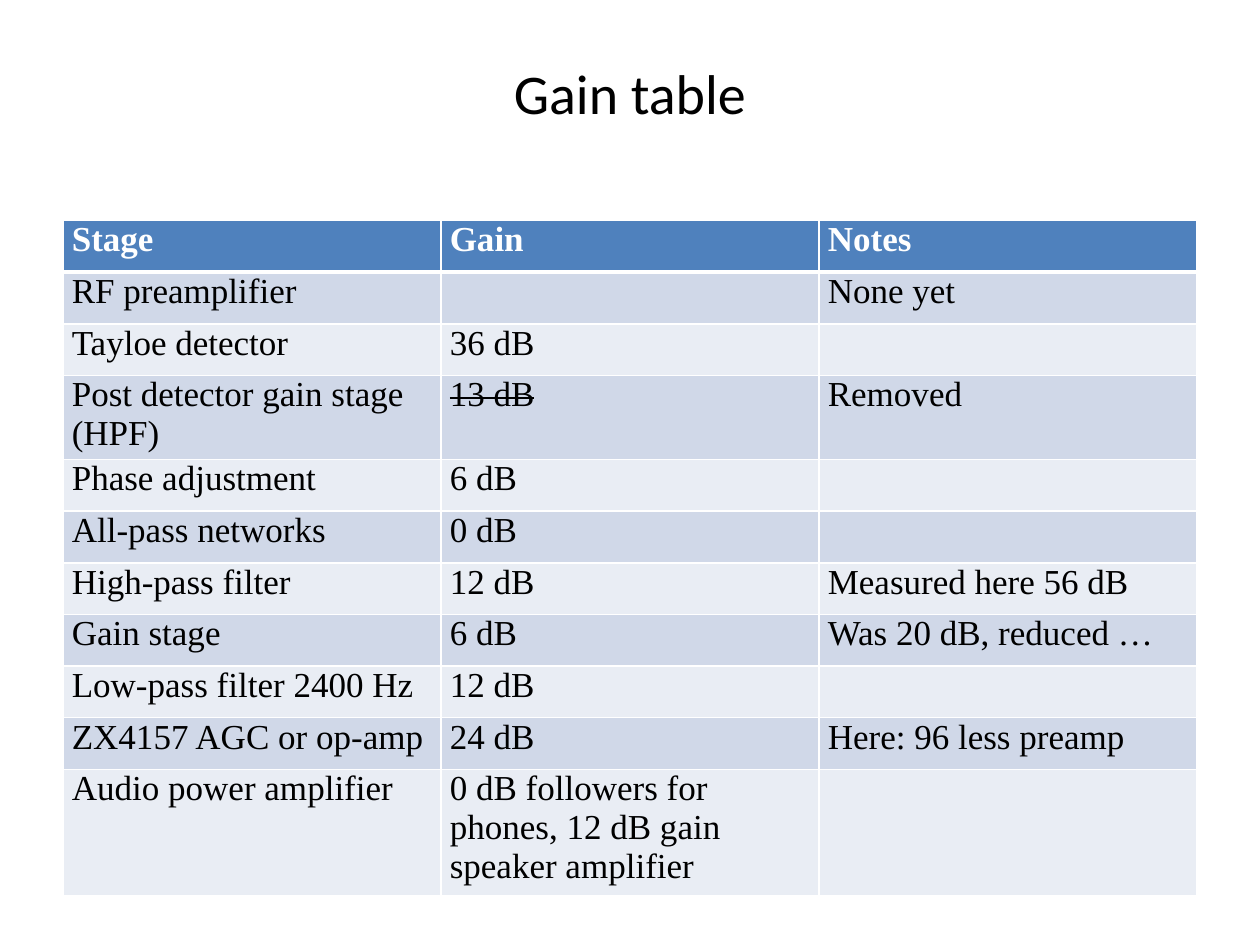
"""Build the gain table slide."""
from lxml.etree import SubElement
from pptx import Presentation
from pptx.dml.color import RGBColor
from pptx.enum.text import MSO_ANCHOR, PP_ALIGN
from pptx.oxml.ns import qn
from pptx.util import Inches, Pt

COLORS = {"ink": "000000", "white": "FFFFFF", "head": "4F81BD", "odd": "D0D8E8", "even": "E9EDF4"}
ROWS = [
    ("Stage", "Gain", "Notes"),
    ("RF preamplifier", "", "None yet"),
    ("Tayloe detector", "36 dB", ""),
    ("Post detector gain stage (HPF)", "13 dB", "Removed"),
    ("Phase adjustment", "6 dB", ""),
    ("All-pass networks", "0 dB", ""),
    ("High-pass filter", "12 dB", "Measured here 56 dB"),
    ("Gain stage", "6 dB", "Was 20 dB, reduced …"),
    ("Low-pass filter 2400 Hz", "12 dB", ""),
    ("ZX4157 AGC or op-amp", "24 dB", "Here: 96 less preamp"),
    ("Audio power amplifier", "0 dB followers for phones, 12 dB gain speaker amplifier", ""),
]
STRUCK = (3, 1)
MARGINS = {"margin_left": Inches(0.07), "margin_right": Inches(0.07), "margin_top": 0, "margin_bottom": 0}


def add_run(p, text, color, **fmt):
    r = p.add_run()
    r.text = text
    r.font.color.rgb = RGBColor.from_string(COLORS[color])
    for name, value in fmt.items():
        setattr(r.font, name, value)
    return r


def add_border(cell, side, width):
    ln = SubElement(cell._tc.get_or_add_tcPr(), qn(f"a:ln{side}"), w=str(Pt(width)))
    fill = SubElement(ln, qn("a:solidFill"))
    SubElement(fill, qn("a:srgbClr"), val=COLORS["white"])


prs = Presentation()
prs.slide_width, prs.slide_height = Inches(10), Inches(7.5)
W, H = prs.slide_width, prs.slide_height
s = prs.slides.add_slide(prs.slide_layouts[6])
left, width = int(W * 0.05), int(W * 0.9)

tf = s.shapes.add_textbox(left, int(H * 0.04), width, Inches(0.87)).text_frame
tf.word_wrap = True
tf.vertical_anchor = MSO_ANCHOR.MIDDLE
p = tf.paragraphs[0]
p.alignment = PP_ALIGN.CENTER
add_run(p, "Gain table", "ink", name="Calibri", size=Pt(32))

row_h = Inches(0.41)
table = s.shapes.add_table(len(ROWS), 3, left, Inches(1.75), width, row_h * len(ROWS)).table
for col in table.columns:
    col.width = width // 3

for i, row in enumerate(ROWS):
    table.rows[i].height = row_h
    head = i == 0
    shade = "head" if head else "odd" if i % 2 else "even"
    for j, text in enumerate(row):
        cell = table.cell(i, j)
        for name, value in MARGINS.items():
            setattr(cell, name, value)
        for side, line in {"L": 1, "R": 1, "T": 3 if i == 1 else 1, "B": 3 if head else 1}.items():
            add_border(cell, side, line)
        cell.fill.solid()
        cell.fill.fore_color.rgb = RGBColor.from_string(COLORS[shade])
        if text:
            p = cell.text_frame.paragraphs[0]
            p.space_after = Pt(6)
            r = add_run(p, text, "white" if head else "ink", name="Times New Roman", size=Pt(20), bold=head)
            if (i, j) == STRUCK:
                r._r.get_or_add_rPr().set("strike", "sngStrike")

prs.save("out.pptx")
